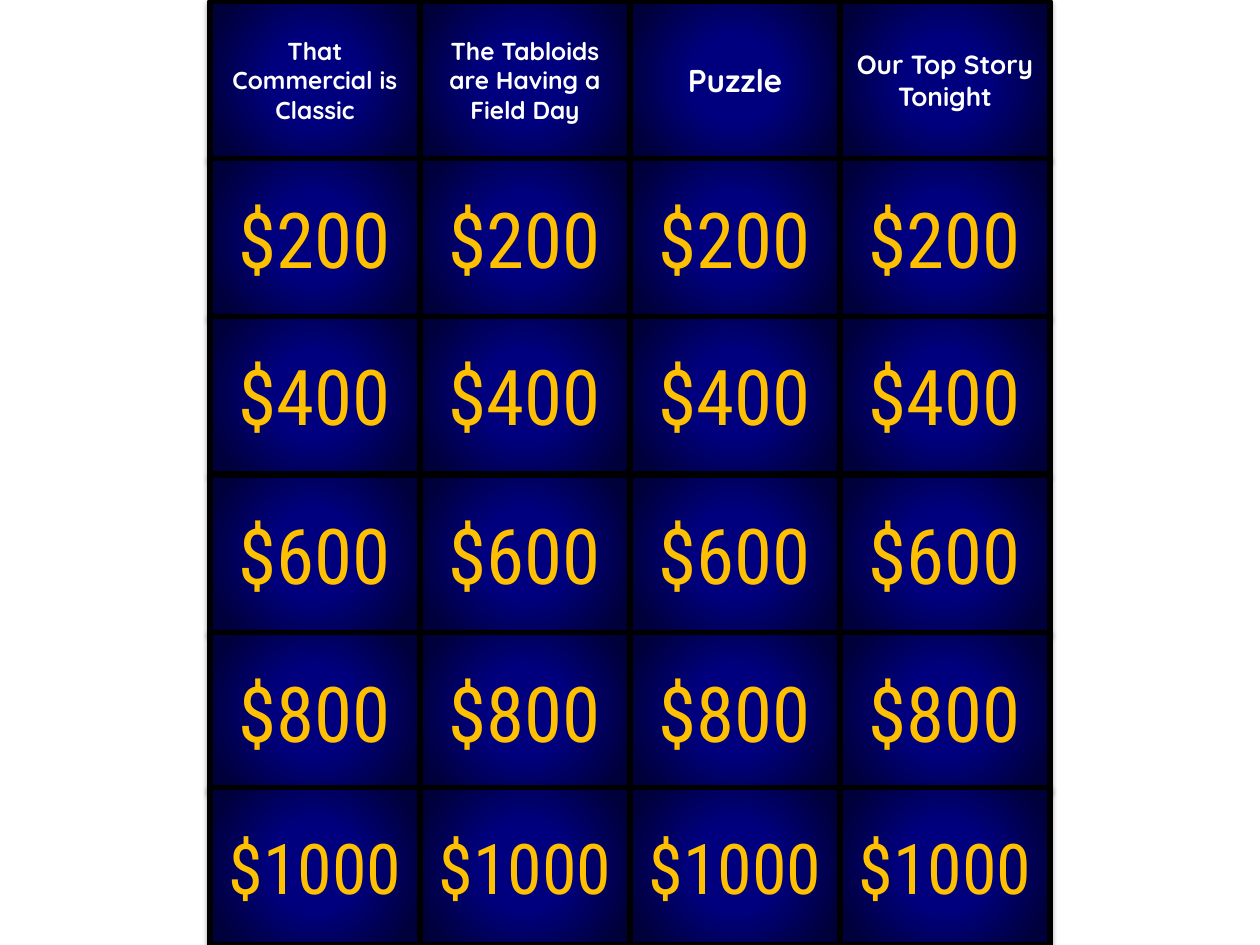
from lxml import etree
from pptx import Presentation
from pptx.dml.color import RGBColor
from pptx.enum.shapes import MSO_SHAPE as Shape
from pptx.enum.text import MSO_ANCHOR as Anchor, PP_ALIGN as Align
from pptx.oxml import parse_xml
from pptx.oxml.ns import nsdecls, qn
from pptx.util import Inches, Pt

BLACK = RGBColor(0x00, 0x00, 0x00)
WHITE = RGBColor(0xFF, 0xFF, 0xFF)
GOLD = RGBColor(0xFF, 0xC0, 0x00)
BLUE = RGBColor(0x00, 0x00, 0x7F)
NAVY = RGBColor(0x00, 0x00, 0x3A)

COLUMN_WIDTH = 10 / 6
ROW_TOPS = [0.01, 1.26, 2.51, 3.77, 5.02, 6.25]
PAINT_ORDER = [1, 2, 3, 0]

CATEGORIES = [
    ("That Commercial is Classic", 14),
    ("The Tabloids are Having a Field Day", 14),
    ("Puzzle", 18),
    ("Our Top Story Tonight", 15),
]
PRIZES = [("$200", 44), ("$400", 44), ("$600", 44), ("$800", 44), ("$1000", 40)]


def add_glow_and_shadow(box):
    """Give the box a radial blue gradient and a soft shadow below it."""
    properties = box.fill._xPr
    properties.append(parse_xml(
        f'<a:gradFill {nsdecls("a")}><a:gsLst>'
        f'<a:gs pos="33000"><a:srgbClr val="{BLUE}"/></a:gs>'
        f'<a:gs pos="87000"><a:srgbClr val="{NAVY}"/></a:gs></a:gsLst>'
        '<a:path path="circle">'
        '<a:fillToRect l="50000" t="50000" r="50000" b="50000"/>'
        '</a:path></a:gradFill>'))
    box.shadow.inherit = False
    shadow = etree.SubElement(
        properties.find(qn("a:effectLst")), qn("a:outerShdw"),
        blurRad=str(Pt(3.1)), dist=str(Pt(1.8)), dir="5400000", rotWithShape="0")
    color = etree.SubElement(shadow, qn("a:srgbClr"), val=str(BLACK))
    etree.SubElement(color, qn("a:alpha"), val="35000")


def add_tile(page, text, column, row, size, font, color, bold=False):
    box = page.shapes.add_shape(
        Shape.RECTANGLE, Inches(COLUMN_WIDTH * (column + 1)), Inches(ROW_TOPS[row]),
        Inches(COLUMN_WIDTH), Inches(1.25))
    add_glow_and_shadow(box)
    box.line.color.rgb = BLACK
    box.line.width = Pt(3)
    frame = box.text_frame
    frame.word_wrap = True
    frame.vertical_anchor = Anchor.MIDDLE
    para = frame.paragraphs[0]
    para.alignment = Align.CENTER
    span = para.add_run()
    span.text = text
    span.font.name = font
    span.font.size = Pt(size)
    span.font.bold = bold
    span.font.color.rgb = color


deck = Presentation()
deck.slide_width = Inches(10)
deck.slide_height = Inches(7.5)
page = deck.slides.add_slide(deck.slide_layouts[6])

for column in PAINT_ORDER:
    category, size = CATEGORIES[column]
    add_tile(page, category, column, 0, size=size, font="Quicksand",
             color=WHITE, bold=True)

for row, (prize, size) in enumerate(PRIZES, start=1):
    for column in PAINT_ORDER:
        add_tile(page, prize, column, row, size=size, font="Roboto Condensed",
                 color=GOLD)

deck.save("out.pptx")
